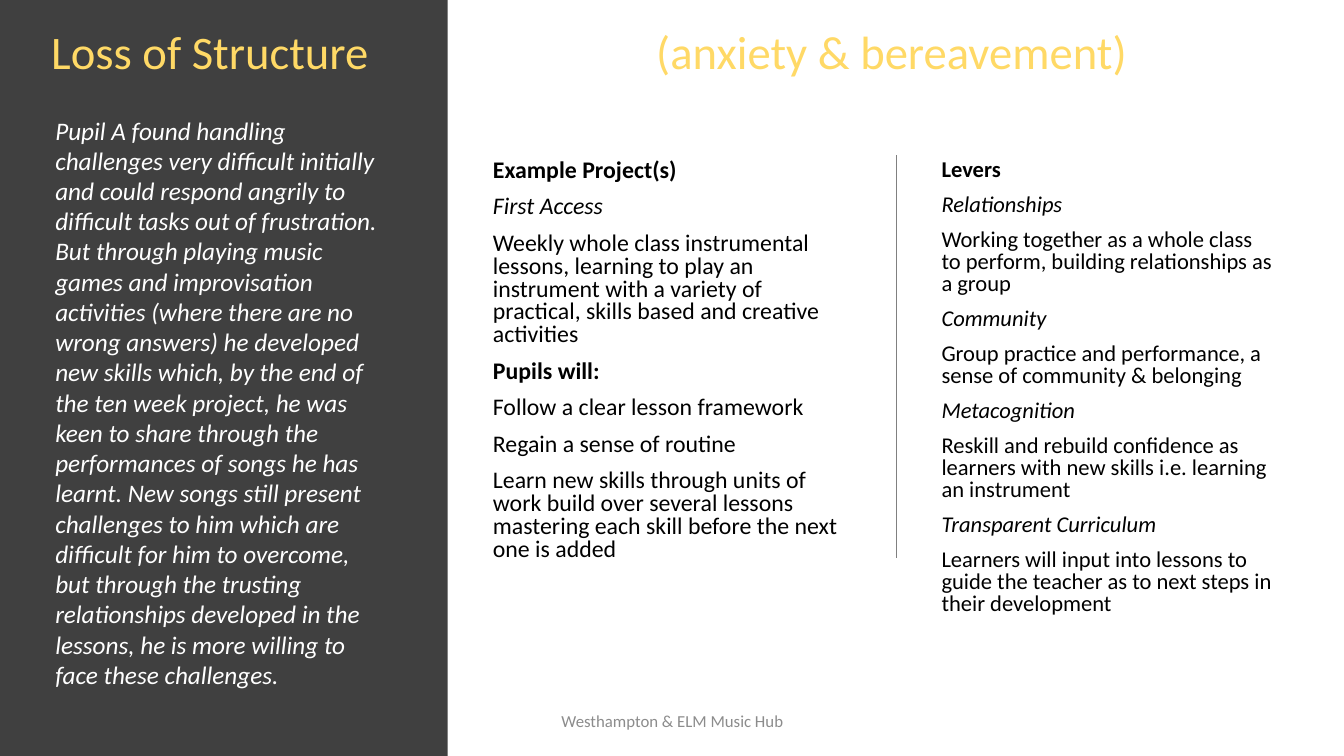
"""Build the Loss of Structure slide."""
from lxml.etree import SubElement
from pptx import Presentation
from pptx.dml.color import RGBColor
from pptx.enum.shapes import MSO_CONNECTOR, MSO_SHAPE
from pptx.enum.text import MSO_ANCHOR, PP_ALIGN
from pptx.oxml.ns import qn
from pptx.util import Inches, Pt

COLOURS = {"panel": "404040", "title": "FFD966", "body": "000000",
           "rule": "808080", "footer": "8C8C8C", "story": "FFFFFF"}

TITLE = [("Loss of Structure\t(anxiety & bereavement)", {})]
TITLE_TAB = 6.0
BOLD, ITALIC = {"bold": True}, {"italic": True}
PROJECTS = [
    ("Example Project(s)", BOLD),
    ("First Access", ITALIC),
    ("Weekly whole class instrumental lessons, learning to play an instrument "
     "with a variety of practical, skills based and creative activities", {}),
    ("Pupils will:", BOLD),
    ("Follow a clear lesson framework", {}),
    ("Regain a sense of routine", {}),
    ("Learn new skills through units of work build over several lessons "
     "mastering each skill before the next one is added", {}),
]
LEVERS = [
    ("Levers", BOLD),
    ("Relationships", ITALIC),
    ("Working together as a whole class to perform, building relationships "
     "as a group", {}),
    ("Community", ITALIC),
    ("Group practice and performance, a sense of community & belonging", {}),
    ("Metacognition", ITALIC),
    ("Reskill and rebuild confidence as learners with new skills i.e. "
     "learning an instrument", {}),
    ("Transparent Curriculum", ITALIC),
    ("Learners will input into lessons to guide the teacher as to next steps "
     "in their development", {}),
]
FOOTER = [("Westhampton & ELM Music Hub", {})]
STORY = [(
    "Pupil A found handling challenges very difficult initially and could "
    "respond angrily to difficult tasks out of frustration. But through "
    "playing music games and improvisation activities (where there are no "
    "wrong answers) he developed new skills which, by the end of the ten week "
    "project, he was keen to share through the performances of songs he has "
    "learnt. New songs still present challenges to him which are difficult "
    "for him to overcome, but through the trusting relationships developed in "
    "the lessons, he is more willing to face these challenges.", ITALIC)]

COLUMN_FORMAT = {"line_spacing": 0.8, "space_before": Pt(9.7)}
TEXT_BOXES = [
    (TITLE, (0.41, 0.24, 11.66, 1.16), 33.3, "title", {"line_spacing": 0.9}, {}),
    (PROJECTS, (4.79, 1.54, 3.75, 4.77), 17, "body", COLUMN_FORMAT, {}),
    (LEVERS, (9.24, 1.54, 3.5, 4.77), 16.1, "body", COLUMN_FORMAT, {}),
    (FOOTER, (4.42, 6.95, 4.5, 0.4), 12, "footer",
     {"alignment": PP_ALIGN.CENTER}, {"vertical_anchor": MSO_ANCHOR.MIDDLE}),
    (STORY, (0.45, 1.09, 3.48, 5.86), 18, "story", {}, {}),
]


def set_attributes(target, values):
    """Set each named value on the target."""
    for name, value in values.items():
        setattr(target, name, value)


def colour(name):
    """Return the named colour."""
    return RGBColor.from_string(COLOURS[name])


def add_panel(slide, height):
    """Add the dark panel at the left."""
    panel = slide.shapes.add_shape(MSO_SHAPE.RECTANGLE, 0, 0, Inches(4.44), height)
    panel.shadow.inherit = False
    panel.fill.solid()
    panel.fill.fore_color.rgb = colour("panel")
    panel.line.fill.background()


def add_rule(slide):
    """Add the vertical rule between the columns."""
    rule = slide.shapes.add_connector(
        MSO_CONNECTOR.STRAIGHT, *map(Inches, (8.89, 1.54, 8.89, 5.54)))
    rule.line.color.rgb = colour("rule")
    rule.line.width = Pt(1)
    SubElement(rule._element.spPr, qn("a:effectLst"))


def add_text(slide, content, place, size, colour_name, layout, frame_format):
    """Add a text box with one paragraph for each line of content."""
    box = slide.shapes.add_textbox(*map(Inches, place))
    frame = box.text_frame
    set_attributes(frame, {"word_wrap": True, **frame_format})
    for index, (text, style) in enumerate(content):
        paragraph = frame.paragraphs[0] if index == 0 else frame.add_paragraph()
        set_attributes(paragraph, layout)
        run = paragraph.add_run()
        run.text = text
        set_attributes(run.font, {"name": "Calibri", "size": Pt(size), **style})
        run.font.color.rgb = colour(colour_name)
    return box


def add_tab_stop(paragraph, position):
    """Add a left tab stop to the paragraph."""
    tabs = SubElement(paragraph._p.get_or_add_pPr(), qn("a:tabLst"))
    SubElement(tabs, qn("a:tab"), pos=str(Inches(position)), algn="l")


def main():
    """Build and save the slide."""
    presentation = Presentation()
    set_attributes(presentation, {"slide_width": Inches(13.33),
                                  "slide_height": Inches(7.5)})
    slide = presentation.slides.add_slide(presentation.slide_layouts[6])
    add_panel(slide, presentation.slide_height)
    add_rule(slide)
    title, *_ = [add_text(slide, *text_box) for text_box in TEXT_BOXES]
    add_tab_stop(title.text_frame.paragraphs[0], TITLE_TAB)
    presentation.save("out.pptx")


if __name__ == "__main__":
    main()
